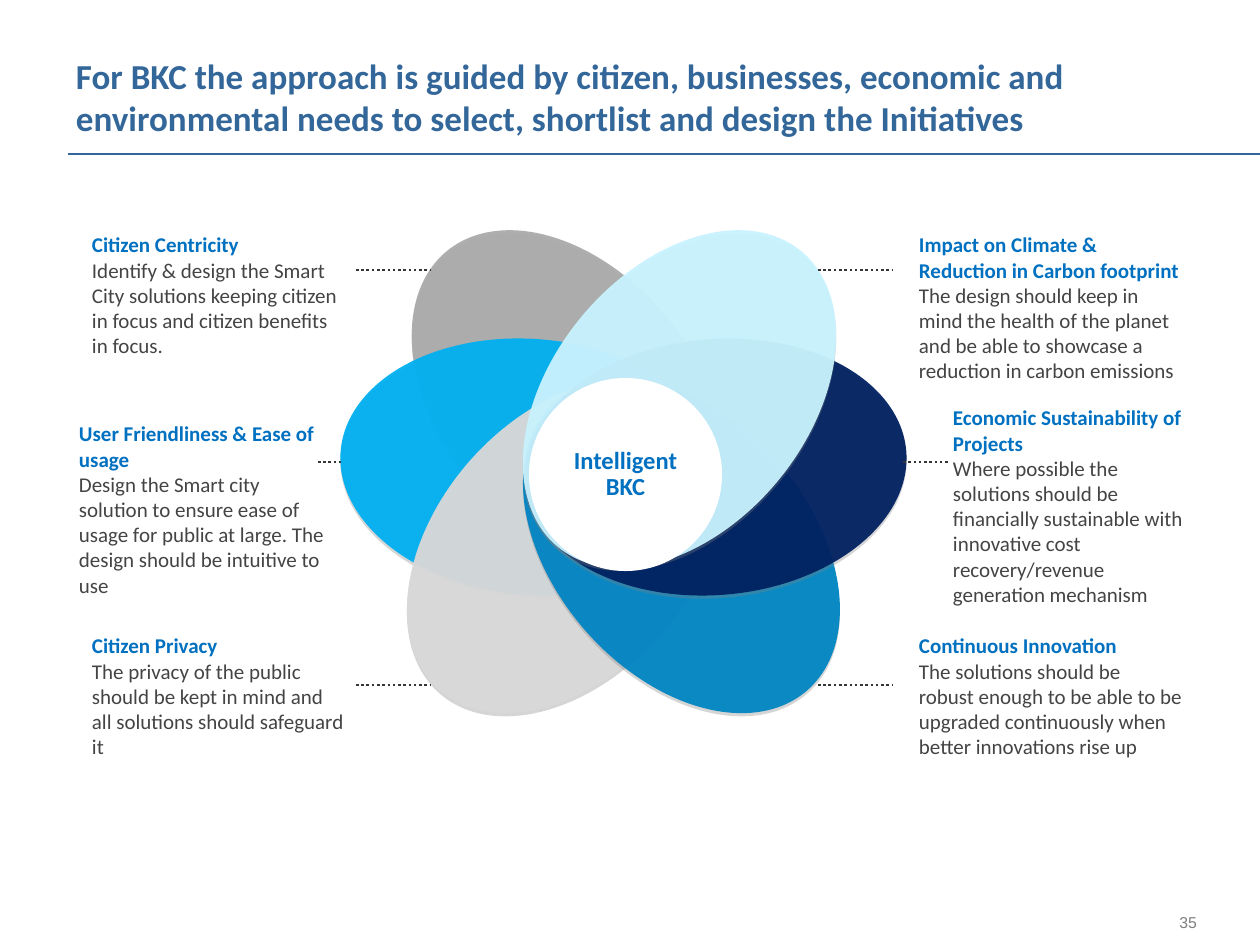
from typing import NamedTuple

from lxml import etree
from pptx import Presentation
from pptx import util as u
from pptx.dml.color import RGBColor
from pptx.enum import dml, shapes, text
from pptx.oxml import parse_xml
from pptx.oxml.ns import nsdecls, qn

SCALE = 914400 / 126  # EMU in one px
STEEL = RGBColor(0x33, 0x66, 0x99)
BLUE = RGBColor(0x00, 0x70, 0xC0)
INK = RGBColor(0x44, 0x44, 0x44)
DOT = RGBColor(0x35, 0x36, 0x37)
GRAY = RGBColor(0x7F, 0x7F, 0x7F)
WHITE = RGBColor(0xFF, 0xFF, 0xFF)
ASH = RGBColor(0xAA, 0xAA, 0xAA)
SKY = RGBColor(0x00, 0xB0, 0xF0)
SILVER = RGBColor(0xD9, 0xD9, 0xD9)
OCEAN = RGBColor(0x01, 0x85, 0xC3)
NAVY = RGBColor(0x00, 0x20, 0x60)
ICE = RGBColor(0xC9, 0xF3, 0xFF)

SHADOW = (
    f'<a:effectLst {nsdecls("a")}><a:outerShdw blurRad="0" dist="22860" '
    'dir="5400000" rotWithShape="0"><a:srgbClr val="808080">'
    '<a:alpha val="35000"/></a:srgbClr></a:outerShdw></a:effectLst>'
)


class Petal(NamedTuple):
    x: int
    y: int
    turn: float
    color: RGBColor
    flip: bool


class Note(NamedTuple):
    x: int
    y: int
    w: int
    h: int
    head: str
    body: str


class Rule(NamedTuple):
    x1: int
    x2: int
    y: int


PETAL_W, PETAL_H = 383, 256
PETALS = [
    Petal(377, 271, 230.6, ASH, True),
    Petal(340, 339, 184.8, SKY, True),
    Petal(374, 418, 131, SILVER, True),
    Petal(490, 418, 229, OCEAN, False),
    Petal(524, 339, 175.2, NAVY, False),
    Petal(488, 271, 129.4, ICE, False),
]
NOTES = [
    Note(79, 226, 280, 140, "Citizen Centricity",
         "Identify & design the Smart City solutions keeping citizen in focus "
         "and citizen benefits in focus."),
    Note(906, 226, 292, 165, "Impact on Climate & Reduction in Carbon footprint",
         "The design should keep in mind the health of the planet and be able "
         "to showcase a reduction in carbon emissions"),
    Note(66, 415, 280, 190, "User Friendliness & Ease of usage",
         "Design the Smart city solution to ensure ease of usage for public at "
         "large. The design should be intuitive to use"),
    Note(79, 627, 280, 140, "Citizen Privacy",
         "The privacy of the public should be kept in mind and all solutions "
         "should safeguard it"),
    Note(940, 399, 260, 217, "Economic Sustainability of Projects",
         "Where possible the solutions should be financially sustainable with "
         "innovative cost recovery/revenue generation mechanism"),
    Note(906, 627, 292, 140, "Continuous Innovation",
         "The solutions should be  robust enough to be able to be upgraded "
         "continuously when better innovations rise up"),
]
DOTS = [Rule(x, x + 74, y) for x in (356, 818) for y in (270, 685)]
DOTS += [Rule(318, 341, 462), Rule(903, 950, 462)]


def px(n: int) -> u.Emu:
    return u.Emu(round(n * SCALE))


def add_run(par, words: str, size: int, color: RGBColor,
            bold: bool = False, face: str = "Calibri") -> None:
    run = par.add_run()
    run.text = words
    font = run.font
    font.size, font.bold, font.name = u.Pt(size), bold, face
    font.color.rgb = color


def add_box(slide, x: int, y: int, w: int, h: int, pads=(13, 6, 13, 6)):
    box = slide.shapes.add_textbox(px(x), px(y), px(w), px(h))
    frame = box.text_frame
    frame.word_wrap = True
    (frame.margin_left, frame.margin_top,
     frame.margin_right, frame.margin_bottom) = map(px, pads)
    return frame


def add_rule(slide, rule: Rule, color: RGBColor, width: float,
             dash=None) -> None:
    line = slide.shapes.add_connector(
        shapes.MSO_CONNECTOR.STRAIGHT,
        px(rule.x1), px(rule.y), px(rule.x2), px(rule.y))
    line.line.color.rgb = color
    line.line.width = u.Pt(width)
    if dash:
        line.line.dash_style = dash
    etree.SubElement(line._element.spPr, qn("a:effectLst"))


def add_oval(slide, x: int, y: int, w: int, h: int, color: RGBColor):
    oval = slide.shapes.add_shape(
        shapes.MSO_SHAPE.OVAL, px(x), px(y), px(w), px(h))
    oval.fill.solid()
    oval.fill.fore_color.rgb = color
    oval.line.fill.background()
    return oval


def add_petal(slide, petal: Petal) -> None:
    oval = add_oval(slide, petal.x, petal.y, PETAL_W, PETAL_H, petal.color)
    oval.rotation = petal.turn
    props = oval._element.spPr
    if petal.flip:
        props.xfrm.set("flipH", "1")
    tint = props.find(qn("a:solidFill"))[0]
    etree.SubElement(tint, qn("a:alpha")).set("val", "95000")
    props.append(parse_xml(SHADOW))


def add_note(slide, note: Note) -> None:
    frame = add_box(slide, note.x, note.y, note.w, note.h)
    frame.auto_size = text.MSO_AUTO_SIZE.SHAPE_TO_FIT_TEXT
    add_run(frame.paragraphs[0], note.head, 12, BLUE, True)
    add_run(frame.add_paragraph(), note.body, 12, INK)


def add_hub(slide) -> None:
    hub = add_oval(slide, 529, 378, 193, 193, WHITE)
    hub.shadow.inherit = False
    frame = hub.text_frame
    frame.word_wrap = True
    frame.vertical_anchor = text.MSO_ANCHOR.MIDDLE
    par = frame.paragraphs[0]
    par.alignment = text.PP_ALIGN.CENTER
    par.line_spacing = 0.9
    par.space_after = u.Pt(1)
    add_run(par, "Intelligent BKC", 14, BLUE, True)


def main() -> None:
    deck = Presentation()
    deck.slide_width, deck.slide_height = px(1260), px(945)
    slide = deck.slides.add_slide(deck.slide_layouts[6])

    # Title, rule and page number
    add_rule(slide, Rule(68, 1260, 154), STEEL, 1)
    page = add_box(slide, 1123, 905, 74, 34, (0, 0, 0, 0))
    page.vertical_anchor = text.MSO_ANCHOR.MIDDLE
    page.paragraphs[0].alignment = text.PP_ALIGN.RIGHT
    add_run(page.paragraphs[0], "35", 9, GRAY, face="Arial")
    title = add_box(slide, 76, 0, 1124, 139, (0, 6, 13, 0))
    title.vertical_anchor = text.MSO_ANCHOR.BOTTOM
    add_run(title.paragraphs[0],
            "For BKC the approach is guided by citizen, businesses, economic "
            "and environmental needs to select, shortlist and design the "
            "Initiatives", 20, STEEL, True)

    # Flower with its notes and leader lines
    for petal in PETALS:
        add_petal(slide, petal)
    for note in NOTES:
        add_note(slide, note)
    for dots in DOTS:
        add_rule(slide, dots, DOT, 1.5, dml.MSO_LINE.ROUND_DOT)
    add_hub(slide)

    deck.save("out.pptx")


if __name__ == "__main__":
    main()
